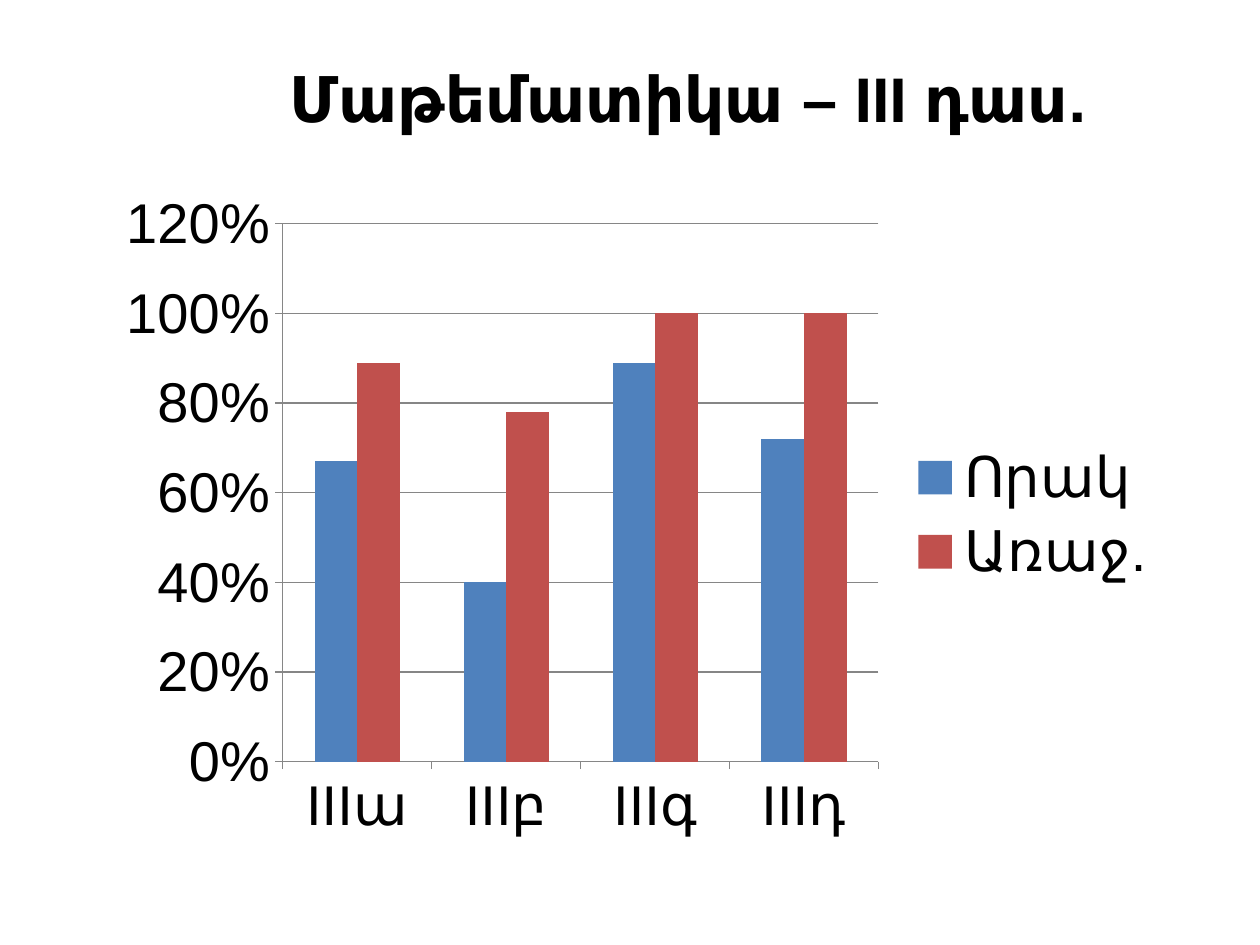
import pptx
import pptx.chart.data
import pptx.dml.color
import pptx.enum.chart
import pptx.enum.text
import pptx.util

RGB = pptx.dml.color.RGBColor
BLACK = RGB(0x00, 0x00, 0x00)
GREY = RGB(0x86, 0x86, 0x86)
BLUE = RGB(0x4F, 0x81, 0xBD)
RED = RGB(0xC0, 0x50, 0x4D)
FONT = "Arial"

# Content
TITLE = "Մաթեմատիկա – III դաս."
CLASSES = ["IIIա", "IIIբ", "IIIգ", "IIIդ"]
SERIES = [
    ("Որակ", BLUE, (0.67, 0.40, 0.89, 0.72)),
    ("Առաջ.", RED, (0.89, 0.78, 1, 1)),
]

# Places in inches: left, top, width, height
WIDE, HIGH = 10, 7.5
TITLE_BOX = (1.67, 0.42, 7.58, 0.71)
CHART_BOX = (0.83, 1.42, 8.5, 5.33)


def inches(box):
    return [pptx.util.Inches(n) for n in box]


def style(font, size, bold=False):
    font.name = FONT
    font.size = pptx.util.Pt(size)
    font.bold = bold
    font.color.rgb = BLACK


def add_title(slide):
    title = slide.shapes.title
    title.left, title.top, title.width, title.height = inches(TITLE_BOX)
    frame = title.text_frame
    frame.text = TITLE
    frame.word_wrap = True
    frame.vertical_anchor = pptx.enum.text.MSO_ANCHOR.MIDDLE
    line = frame.paragraphs[0]
    line.alignment = pptx.enum.text.PP_ALIGN.CENTER
    style(line.runs[0].font, 36, True)


def add_chart(slide):
    data = pptx.chart.data.CategoryChartData(number_format="0%")
    data.categories = CLASSES
    for name, _, vals in SERIES:
        data.add_series(name, vals)
    kind = pptx.enum.chart.XL_CHART_TYPE.COLUMN_CLUSTERED
    chart = slide.shapes.add_chart(kind, *inches(CHART_BOX), data).chart
    chart.has_title = False
    style(chart.font, 32)

    # Columns
    plot = chart.plots[0]
    plot.gap_width = 150
    plot.overlap = 0
    plot.vary_by_categories = False
    for series, (_, color, _) in zip(plot.series, SERIES):
        series.format.fill.solid()
        series.format.fill.fore_color.rgb = color

    # Axes
    for axis in (chart.category_axis, chart.value_axis):
        axis.major_tick_mark = pptx.enum.chart.XL_TICK_MARK.OUTSIDE
        axis.format.line.color.rgb = GREY
        style(axis.tick_labels.font, 32)
    scale = chart.value_axis
    scale.minimum_scale, scale.maximum_scale, scale.major_unit = 0, 1.2, 0.2
    scale.tick_labels.number_format = "0%"
    scale.tick_labels.number_format_is_linked = False
    scale.has_major_gridlines = True
    scale.major_gridlines.format.line.color.rgb = GREY

    # Legend
    chart.has_legend = True
    chart.legend.position = pptx.enum.chart.XL_LEGEND_POSITION.RIGHT
    chart.legend.include_in_layout = False
    style(chart.legend.font, 32)


def main():
    deck = pptx.Presentation()
    deck.slide_width, deck.slide_height = inches((WIDE, HIGH))
    slide = deck.slides.add_slide(deck.slide_layouts[5])
    add_title(slide)
    add_chart(slide)
    deck.save("out.pptx")


if __name__ == "__main__":
    main()
